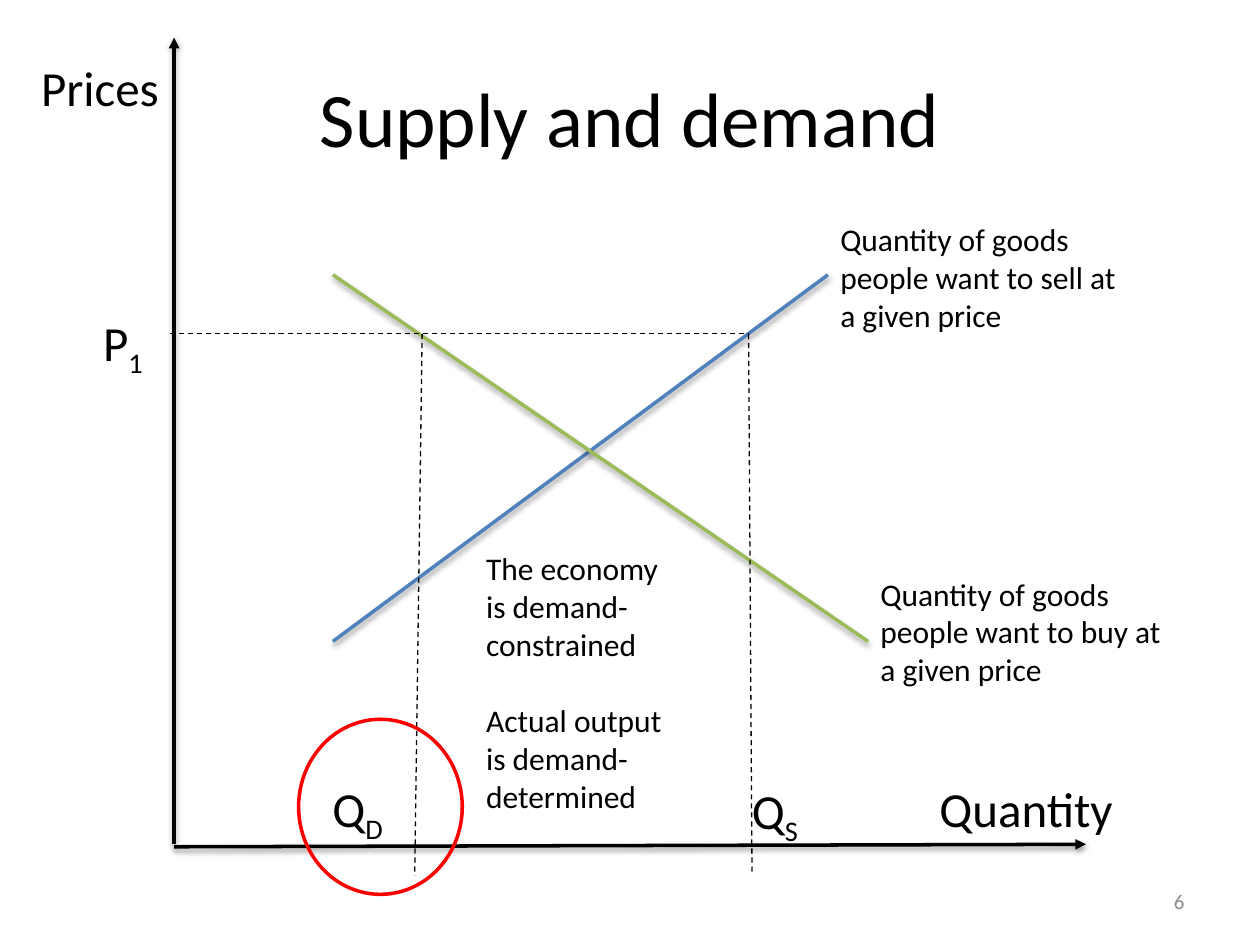
from lxml.etree import SubElement
from pptx import Presentation
from pptx.dml.color import RGBColor
from pptx.enum.dml import MSO_LINE
from pptx.enum.shapes import MSO_CONNECTOR, MSO_SHAPE
from pptx.enum.text import MSO_ANCHOR, PP_ALIGN
from pptx.oxml.ns import qn
from pptx.util import Cm, Pt

COLORS = {"ink": "000000", "supply": "4F81BD", "demand": "9BBB59",
          "highlight": "FF0000", "page": "8C8C8C"}
FONT = "Calibri"

TITLE = "Supply and demand"
PAGE_NUMBER = "6"

PRICE_Y, FOOT_Y = 6.73, 17.65
AXIS_X, AXIS_Y = 3.51, 17.02
CURVE_LEFT, CURVE_TOP, CURVE_BOTTOM = 6.71, 5.54, 12.93
SUPPLY_END, DEMAND_END = 16.69, 17.5
DEMAND_X, SUPPLY_X = 8.51, 15.09

AXES = [
    ((AXIS_X, AXIS_Y), (AXIS_X, 0.76)),
    ((AXIS_X, 17.07), (21.89, AXIS_Y)),
]
CURVES = [
    ((CURVE_LEFT, CURVE_BOTTOM), (SUPPLY_END, CURVE_TOP), "supply"),
    ((DEMAND_END, CURVE_BOTTOM), (CURVE_LEFT, CURVE_TOP), "demand"),
]
GUIDES = [
    ((3.43, PRICE_Y), (SUPPLY_X, PRICE_Y)),
    ((DEMAND_X, PRICE_Y), (8.36, FOOT_Y)),
    ((SUPPLY_X, PRICE_Y), (15.16, FOOT_Y)),
]
AXIS_LABELS = [
    ("Prices", "", 0.58, 1.04, 3.0),
    ("Quantity", "", 18.69, 15.57, 4.9),
    ("Q", "D", 6.45, 15.57, 4.9),
    ("Q", "S", 14.91, 15.6, 4.9),
    ("P", "1", 1.83, 6.17, 4.9),
]
NOTES = [
    (["Quantity of goods people want to sell at a given price"],
     SUPPLY_END, 4.32, 6.2, 2.57),
    (["Quantity of goods people want to buy at a given price"],
     DEMAND_END, 11.46, 6.2, 2.57),
    (["The economy is demand-constrained",
      "Actual output is demand- determined"], 9.55, 10.95, 4.19, 5.64),
]
DEMAND_RING = (6.02, 14.5, 3.3, 3.53)


def color(name):
    return RGBColor.from_string(COLORS[name])


def write(paragraph, text, size=18, ink="ink", align=PP_ALIGN.LEFT, subscript=""):
    paragraph.alignment = align
    for part, offset in ((text, None), (subscript, "-25000")):
        if not part:
            continue
        run = paragraph.add_run()
        run.text = part
        run.font.name = FONT
        run.font.size = Pt(size)
        run.font.color.rgb = color(ink)
        if offset:
            run.font._element.set("baseline", offset)


def add_text(slide, paragraphs, left, top, width, height,
             anchor=MSO_ANCHOR.TOP, gap=0, **style):
    label = slide.shapes.add_textbox(Cm(left), Cm(top), Cm(width), Cm(height))
    frame = label.text_frame
    frame.word_wrap = True
    frame.vertical_anchor = anchor
    for index, text in enumerate(paragraphs):
        paragraph = frame.add_paragraph() if index else frame.paragraphs[0]
        if index:
            paragraph.space_before = Pt(gap)
        write(paragraph, text, **style)


def add_line(slide, start, end, ink="ink", width=2, arrow=False, dashed=False):
    line = slide.shapes.add_connector(
        MSO_CONNECTOR.STRAIGHT, *(Cm(value) for value in start + end))
    line.line.color.rgb = color(ink)
    line.line.width = Pt(width)
    properties = line._element.spPr
    if dashed:
        line.line.dash_style = MSO_LINE.DASH
        SubElement(properties, qn("a:effectLst"))
    if arrow:
        SubElement(properties.find(qn("a:ln")), qn("a:tailEnd"), type="triangle")


def main():
    deck = Presentation()
    deck.slide_width, deck.slide_height = Cm(25.4), Cm(19.05)
    slide = deck.slides.add_slide(deck.slide_layouts[5])

    title = slide.shapes.title
    title.left, title.top = Cm(1.27), Cm(0.76)
    title.width, title.height = Cm(22.86), Cm(3.18)
    title.text_frame.vertical_anchor = MSO_ANCHOR.MIDDLE
    write(title.text_frame.paragraphs[0], TITLE, size=44, align=PP_ALIGN.CENTER)

    add_text(slide, [PAGE_NUMBER], 18.21, 17.65, 5.92, 1.02, size=12,
             anchor=MSO_ANCHOR.MIDDLE, ink="page", align=PP_ALIGN.RIGHT)

    for start, end in AXES:
        add_line(slide, start, end, arrow=True)
    for start, end, ink in CURVES:
        add_line(slide, start, end, ink=ink)
    for start, end in GUIDES:
        add_line(slide, start, end, width=0.75, dashed=True)

    for text, subscript, left, top, width in AXIS_LABELS:
        add_text(slide, [text], left, top, width, 1.45, size=28, subscript=subscript)

    ring = slide.shapes.add_shape(MSO_SHAPE.OVAL, *(Cm(v) for v in DEMAND_RING))
    ring.shadow.inherit = False
    ring.fill.background()
    ring.line.color.rgb = color("highlight")
    ring.line.width = Pt(2)

    for paragraphs, left, top, width, height in NOTES:
        add_text(slide, paragraphs, left, top, width, height, gap=22)

    deck.save("out.pptx")


if __name__ == "__main__":
    main()
